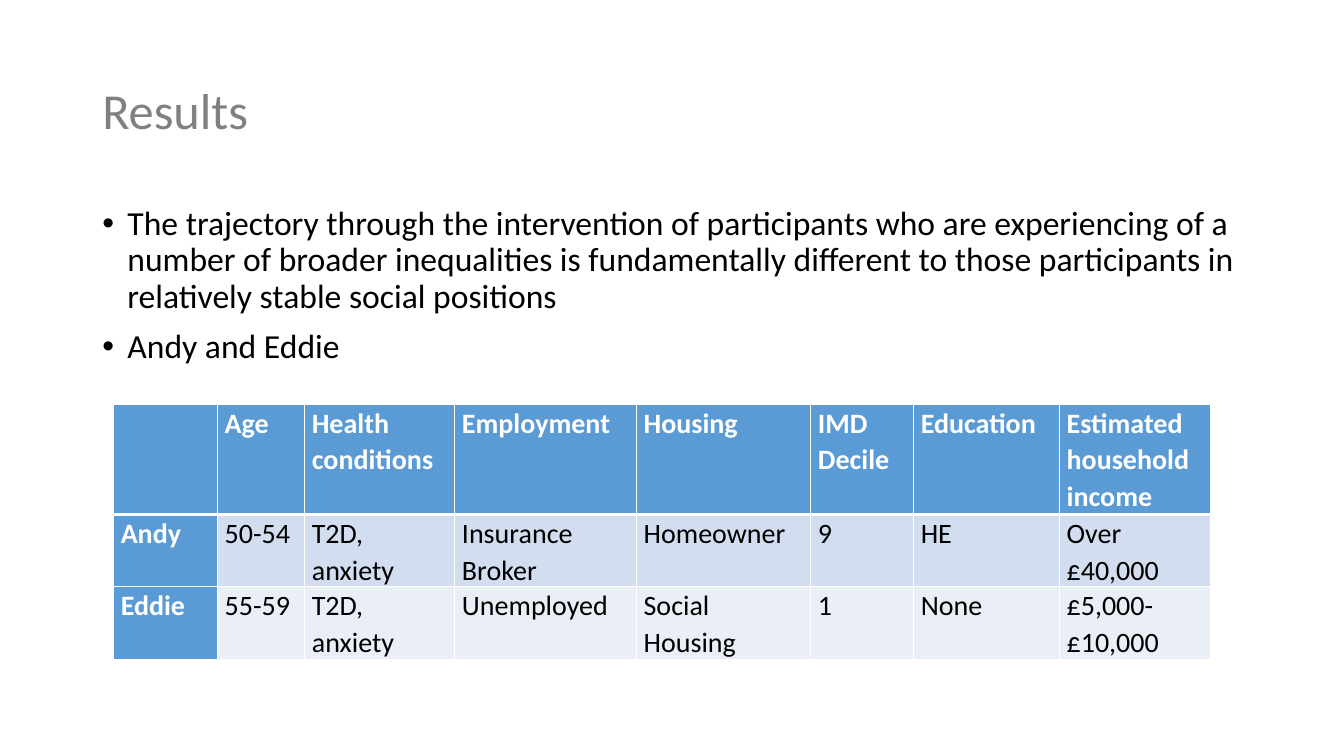
from dataclasses import dataclass

from lxml.etree import SubElement
from pptx import Presentation
from pptx.dml.color import RGBColor
from pptx.enum.text import MSO_ANCHOR
from pptx.oxml.ns import qn
from pptx.slide import Slide
from pptx.table import _Cell
from pptx.text.text import TextFrame, _Paragraph
from pptx.util import Pt

EMU_PER_PX = 9525
FONT = "Calibri"
COLOURS = {
    "title": "808080",
    "text": "000000",
    "white": "FFFFFF",
    "header": "5B9BD5",
    "odd_row": "D2DEEF",
    "even_row": "EAEFF7",
}
BULLETS = [
    "The trajectory through the intervention of participants who are experiencing of a "
    "number of broader inequalities is fundamentally different to those participants in "
    "relatively stable social positions",
    "Andy and Eddie",
]
PARTICIPANTS = [
    ["", "Age", "Health conditions", "Employment", "Housing", "IMD Decile", "Education",
     "Estimated household income"],
    ["Andy", "50-54", "T2D, anxiety", "Insurance Broker", "Homeowner", "9", "HE",
     "Over £40,000"],
    ["Eddie", "55-59", "T2D, anxiety", "Unemployed", "Social Housing", "1", "None",
     "£5,000-£10,000"],
]
COLUMN_WIDTHS = [99, 83, 143, 173, 166, 98, 139, 144]
ROW_HEIGHTS = [105, 69, 69]


@dataclass(frozen=True)
class Area:
    left: int
    top: int
    width: int
    height: int

    def emu(self) -> tuple[int, int, int, int]:
        return px(self.left), px(self.top), px(self.width), px(self.height)


@dataclass(frozen=True)
class TextStyle:
    size: int
    colour: str
    line_spacing: float
    bold: bool = False


TITLE_STYLE = TextStyle(36, "title", 0.9)
BODY_STYLE = TextStyle(24, "text", 0.9)
HEADER_STYLE = TextStyle(20, "white", 1.07, bold=True)
CELL_STYLE = TextStyle(20, "text", 1.07)


def px(length: int) -> int:
    return length * EMU_PER_PX


def colour(name: str) -> RGBColor:
    return RGBColor.from_string(COLOURS[name])


def write(para: _Paragraph, text: str, style: TextStyle) -> None:
    if text:
        para.text = text
    para.line_spacing = style.line_spacing
    para.font.name = FONT
    para.font.size = Pt(style.size)
    para.font.bold = style.bold
    para.font.color.rgb = colour(style.colour)


def add_text_frame(page: Slide, area: Area, anchor: MSO_ANCHOR) -> TextFrame:
    frame = page.shapes.add_textbox(*area.emu()).text_frame
    frame.word_wrap = True
    frame.vertical_anchor = anchor
    return frame


def add_bullet(para: _Paragraph) -> None:
    para.space_before = Pt(10)
    properties = para._p.get_or_add_pPr()
    properties.set("marL", str(px(24)))
    properties.set("indent", str(px(-24)))
    bullet_font = properties.makeelement(qn("a:buFont"), {"typeface": "Arial"})
    bullet = properties.makeelement(qn("a:buChar"), {"char": "•"})
    properties.find(qn("a:defRPr")).addprevious(bullet_font)
    bullet_font.addnext(bullet)


def add_borders(cell: _Cell, top: int, bottom: int) -> None:
    properties = cell._tc.get_or_add_tcPr()
    for side, points in {"L": 1, "R": 1, "T": top, "B": bottom}.items():
        line = SubElement(properties, qn(f"a:ln{side}"), w=str(Pt(points)))
        fill = SubElement(line, qn("a:solidFill"))
        SubElement(fill, qn("a:srgbClr"), val=COLOURS["white"])


def fill_cell(cell: _Cell, text: str, row: int, column: int) -> None:
    is_header = row == 0 or column == 0
    add_borders(cell, top=3 if row == 1 else 1, bottom=3 if row == 0 else 1)
    cell.fill.solid()
    cell.fill.fore_color.rgb = colour(
        "header" if is_header else "odd_row" if row % 2 else "even_row"
    )
    cell.margin_left = cell.margin_right = px(7)
    cell.margin_top = cell.margin_bottom = 0
    write(cell.text_frame.paragraphs[0], text, HEADER_STYLE if is_header else CELL_STYLE)


def add_participants(page: Slide, left: int, top: int) -> None:
    area = Area(left, top, sum(COLUMN_WIDTHS), sum(ROW_HEIGHTS))
    table = page.shapes.add_table(len(ROW_HEIGHTS), len(COLUMN_WIDTHS), *area.emu()).table
    table.first_row = table.horz_banding = False
    for column, width in zip(table.columns, COLUMN_WIDTHS):
        column.width = px(width)
    for row, height in zip(table.rows, ROW_HEIGHTS):
        row.height = px(height)
    for row_index, texts in enumerate(PARTICIPANTS):
        for column_index, text in enumerate(texts):
            fill_cell(table.cell(row_index, column_index), text, row_index, column_index)


def main() -> None:
    deck = Presentation()
    deck.slide_width, deck.slide_height = px(1280), px(720)
    page = deck.slides.add_slide(deck.slide_layouts[6])

    title = add_text_frame(page, Area(88, 38, 1104, 139), MSO_ANCHOR.MIDDLE)
    write(title.paragraphs[0], "Results", TITLE_STYLE)

    body = add_text_frame(page, Area(88, 192, 1104, 457), MSO_ANCHOR.TOP)
    for index, text in enumerate(BULLETS):
        para = body.add_paragraph() if index else body.paragraphs[0]
        write(para, text, BODY_STYLE)
        add_bullet(para)

    add_participants(page, left=108, top=385)
    deck.save("out.pptx")


if __name__ == "__main__":
    main()
